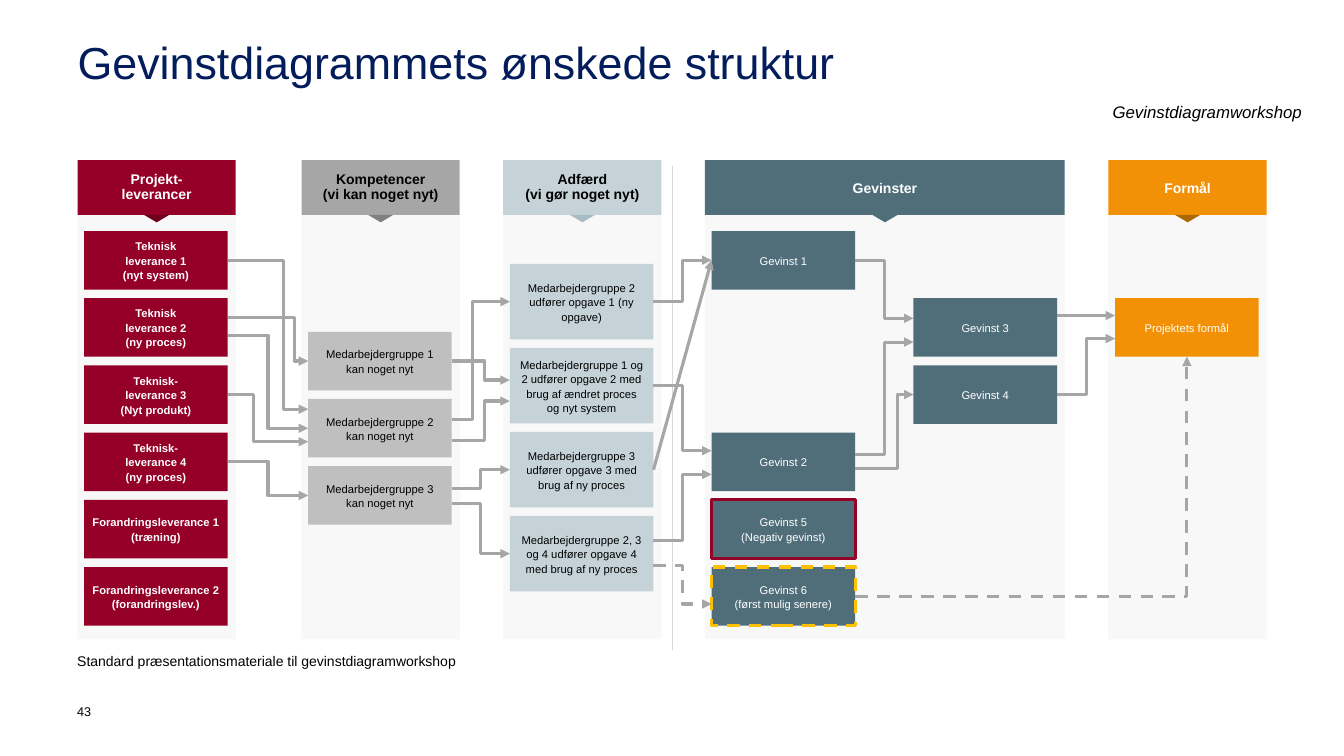
from lxml import etree
from pptx import Presentation
from pptx import util as u
from pptx.dml import color
from pptx.enum import dml, shapes, text
from pptx.oxml import ns

FONT = "Arial"
RED, SLATE, ORANGE, PALE = "940027", "506E7A", "F29105", "C5D3D9"
WHITE, BLACK, ARROW = "FFFFFF", "000000", "A6A6A6"
HEADER_HEIGHT = 39
CARD_INSET, CARD_WIDTH, CARD_HEIGHT = 4.7, 102.6, 41.8
FIRST_ROW, ROW_STEP, COLUMN_STEP = 50.5, 48, 144.2
TALL_HEIGHT, TALL_STEP = 54, 60


def rgb(value):
    return color.RGBColor.from_string(value)


def sub(parent, tag, **attributes):
    return etree.SubElement(parent, ns.qn(tag), attributes)


def write(frame, words, size, ink, bold=False, italic=False, align="CENTER",
          spacing=None, anchor="MIDDLE", insets=(0, 0)):
    frame.word_wrap = True
    frame.vertical_anchor = text.MSO_ANCHOR[anchor]
    frame.margin_left = frame.margin_right = u.Pt(insets[0])
    frame.margin_top = frame.margin_bottom = u.Pt(insets[1])
    for number, line in enumerate(words.split("\n")):
        paragraph = frame.add_paragraph() if number else frame.paragraphs[0]
        paragraph.alignment = text.PP_ALIGN[align]
        if spacing:
            paragraph.line_spacing = spacing
        for part_number, part in enumerate(line.split("\v")):
            if part_number:
                paragraph.add_line_break()
            run = paragraph.add_run()
            run.text = part
            run.font.name = FONT
            run.font.size = u.Pt(size)
            run.font.bold = bold
            run.font.italic = italic
            run.font.color.rgb = rgb(ink)


def label(slide, box, words, size, ink=BLACK, **style):
    frame = slide.shapes.add_textbox(*map(u.Pt, box)).text_frame
    write(frame, words, size, ink, anchor="TOP", **style)


def block(slide, box, fill, preset="RECTANGLE"):
    shape = slide.shapes.add_shape(shapes.MSO_SHAPE[preset], *map(u.Pt, box))
    shape.shadow.inherit = False
    shape.fill.solid()
    shape.fill.fore_color.rgb = rgb(fill)
    shape.line.fill.background()
    return shape


def column(slide, box, heading, fill, ink, pointer, spacing=1.08):
    left, top, width, height = box
    body = block(slide, (left, top + HEADER_HEIGHT, width, height - HEADER_HEIGHT), "F2F2F2")
    shade = body.fill._xPr.find(".//" + ns.qn("a:srgbClr"))
    sub(shade, "a:alpha", val="50000")
    header = block(slide, (left, top, width, HEADER_HEIGHT), fill)
    write(header.text_frame, heading, 10, ink, bold=True, spacing=spacing, insets=(7.2, 3.6))
    arrow = block(slide, (left + width / 2 - 9, top + HEADER_HEIGHT, 18, 5.3),
                  pointer, "ISOSCELES_TRIANGLE")
    arrow.rotation = 180


def cards(slide, box, items, fill, ink, first=FIRST_ROW, step=ROW_STEP,
          height=CARD_HEIGHT, insets=(2.9, 0), bold=False):
    placed = []
    for across, row, words in items:
        place = (box[0] + CARD_INSET + across * COLUMN_STEP,
                 box[1] + first + row * step, CARD_WIDTH, height)
        card = block(slide, place, fill)
        write(card.text_frame, words, 8, ink, bold=bold, spacing=1.08, insets=insets)
        placed.append(card)
    return placed


def outline(card, ink, dashed=False):
    card.line.color.rgb = rgb(ink)
    card.line.width = u.Pt(2.25)
    if dashed:
        card.line.dash_style = dml.MSO_LINE.DASH


def connector(slide, kind, start, end, ink=ARROW, width=2.25):
    line = slide.shapes.add_connector(shapes.MSO_CONNECTOR[kind],
                                      *(u.Emu(int(v)) for v in (*start, *end)))
    line.line.color.rgb = rgb(ink)
    line.line.width = u.Pt(width)
    sub(line._element.spPr, "a:effectLst")
    return line


def arrowhead(line, dashed=False):
    if dashed:
        line.line.dash_style = dml.MSO_LINE.DASH
    sub(line.line._get_or_add_ln(), "a:tailEnd", type="triangle")


def side(card, right, shift):
    return (card.left + card.width * right, card.top + card.height / 2 + u.Pt(shift))


def link(slide, source, leave, target, arrive, bend=0.5, dashed=False):
    start, end = side(source, 1, leave), side(target, 0, arrive)
    kind = "STRAIGHT" if start[1] == end[1] else "ELBOW"
    line = connector(slide, kind, start, end)
    if kind == "ELBOW":
        guides = line._element.spPr.find(ns.qn("a:prstGeom")).find(ns.qn("a:avLst"))
        sub(guides, "a:gd", name="adj1", fmla=f"val {round(bend * 100000)}")
    arrowhead(line, dashed)


def heading_region(slide, box):
    left, top, width, height = box
    label(slide, (left, top, width, 73), "Gevinstdiagrammets ønskede struktur", 32,
          "031D5C", align="LEFT", spacing=0.9)
    label(slide, (left + 725, top + 43.9, 164, 14.4), "Gevinstdiagramworkshop", 12, italic=True)


def footer_region(slide, box):
    left, top, width, height = box
    label(slide, (left, top, width, 12.2),
          "Standard præsentationsmateriale til gevinstdiagramworkshop", 10, align="LEFT")
    label(slide, (left, top + 36.7, 22, 28), "43", 9, align="LEFT")


def diagram(slide, box):
    left, top, width, height = box
    divider_x = u.Pt(left + 425)
    connector(slide, "STRAIGHT", (divider_x, u.Pt(top + 4)),
              (divider_x, u.Pt(top + height + 8)), "DBD9D6", 0.25)
    deliveries, skills, behaviour, gains, purpose = [
        (left + x, top, w, height)
        for x, w in ((0, 113), (160, 113), (304.1, 113), (448.2, 257), (736.4, 113))]

    column(slide, deliveries, "Projekt-\vleverancer", RED, WHITE, "6F001D", 0.9)
    column(slide, skills, "Kompetencer\n(vi kan noget nyt)", "A6A6A6", BLACK, "808080", 0.9)
    column(slide, behaviour, "Adfærd\v(vi gør noget nyt)", PALE, BLACK, "A8BDC6", 0.9)
    column(slide, gains, "Gevinster", SLATE, WHITE, SLATE)
    column(slide, purpose, "Formål", ORANGE, WHITE, "AD6803")

    delivery_words = ["Teknisk\vleverance 1\v(nyt system)", "Teknisk\vleverance 2\n(ny proces)",
                      "Teknisk-\vleverance 3\v(Nyt produkt)", "Teknisk-\vleverance 4\v(ny proces)",
                      "Forandringsleverance 1\v(træning)",
                      "Forandringsleverance 2\v(forandringslev.)"]
    lev1, lev2, lev3, lev4, *_ = cards(
        slide, deliveries, [(0, row, words) for row, words in enumerate(delivery_words)],
        RED, WHITE, insets=(2.9, 2.9), bold=True)
    skill1, skill2, skill3 = cards(
        slide, skills,
        [(0, row + 1.5, f"Medarbejdergruppe {row + 1} kan noget nyt") for row in range(3)],
        "BFBFBF", BLACK, insets=(6.5, 0))
    tasks = ["2 udfører opgave 1 (ny opgave)",
             "1 og 2 udfører opgave 2 med brug af ændret proces og nyt system",
             "3 udfører opgave 3 med brug af ny proces",
             "2, 3 og 4 udfører opgave 4 med brug af ny proces"]
    act1, act2, act3, act4 = cards(
        slide, behaviour,
        [(0, row, f"Medarbejdergruppe {task}") for row, task in enumerate(tasks)],
        PALE, BLACK, first=74, step=TALL_STEP, height=TALL_HEIGHT, insets=(6.5, 0))
    gain1, gain2, gain3, gain4, gain5, gain6 = cards(
        slide, gains,
        [(0, 0, "Gevinst 1"), (0, 3, "Gevinst 2"), (1, 1, "Gevinst 3"), (1, 2, "Gevinst 4"),
         (0, 4, "Gevinst 5\n(Negativ gevinst)"), (0, 5, "Gevinst 6\n(først mulig senere)")],
        SLATE, WHITE)
    outline(gain5, RED)
    outline(gain6, "FFC000", dashed=True)
    goal, = cards(slide, purpose, [(0, 1, "Projektets formål")], ORANGE, WHITE)

    for route in [
            (lev1, 0, skill2, -13.6, 0.69), (lev2, -7, skill1, 0, 0.83),
            (lev2, 6, skill2, 0), (lev3, 0, skill2, 9.6, 0.32), (lev4, 0, skill3, 0),
            (skill1, 0, act2, -4, 0.57), (skill2, -6, act1, 0, 0.36),
            (skill2, 9, act2, 11, 0.57), (skill3, -5, act3, 0), (skill3, 6, act4, 0),
            (act1, 0, gain1, 0), (act2, 0, gain2, -8), (act4, -9.6, gain2, 9),
            (act4, 8.5, gain6, 5.5, 0.5, True), (gain1, 0, gain3, -6.5),
            (gain2, -5, gain3, 10.5), (gain2, 5, gain4, 0, 0.72),
            (gain3, -8.5, goal, -8.5), (gain4, 0, goal, 8)]:
        link(slide, *route)

    shortcut = connector(slide, "STRAIGHT", side(act3, 1, 0), side(gain1, 0, 0))
    shortcut.begin_connect(act3, 3)
    shortcut.end_connect(gain1, 1)
    arrowhead(shortcut)

    later = connector(slide, "ELBOW", side(gain6, 1, 0),
                      (goal.left + goal.width / 2, goal.top + goal.height))
    later._element.spPr.find(ns.qn("a:prstGeom")).set("prst", "bentConnector2")
    arrowhead(later, dashed=True)


def main():
    deck = Presentation()
    deck.slide_width, deck.slide_height = u.Pt(960), u.Pt(540)
    slide = deck.slides.add_slide(deck.slide_layouts[6])
    heading_region(slide, (55.4, 28.8, 850, 73))
    diagram(slide, (55.4, 114.5, 850, 342))
    footer_region(slide, (55.2, 465.8, 521, 65))
    deck.save("out.pptx")


if __name__ == "__main__":
    main()
